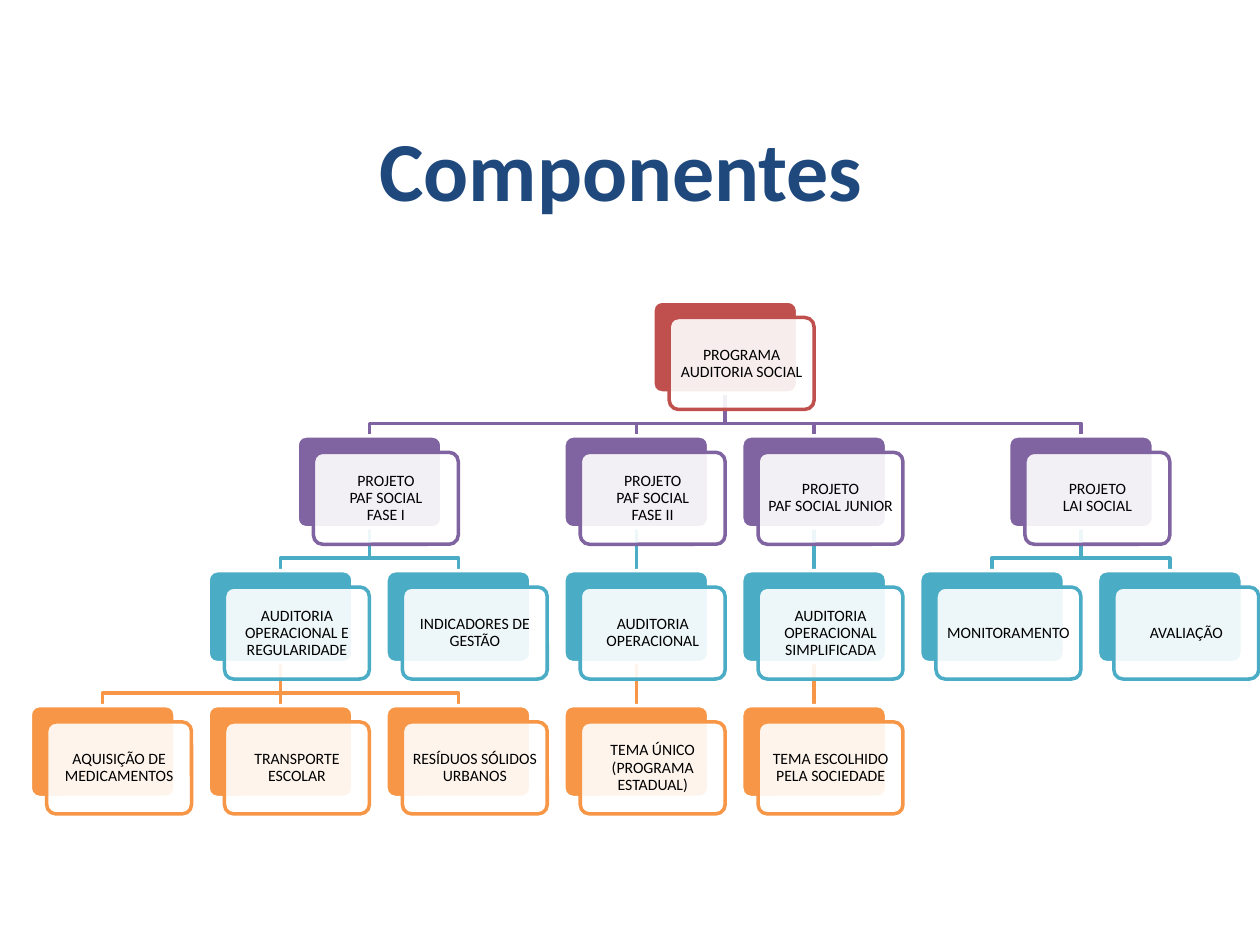
from dataclasses import dataclass
from typing import Iterator

from lxml import etree
from pptx import Presentation
from pptx import util as u
from pptx.dml.color import RGBColor
from pptx.enum import shapes, text
from pptx.oxml import ns

WHITE = RGBColor(0xFF, 0xFF, 0xFF)
BLACK = RGBColor(0x00, 0x00, 0x00)
NAVY = RGBColor(0x1F, 0x49, 0x7D)
RED = RGBColor(0xC0, 0x50, 0x4D)
PURPLE = RGBColor(0x80, 0x64, 0xA2)
TEAL = RGBColor(0x4B, 0xAC, 0xC6)
ORANGE = RGBColor(0xF7, 0x96, 0x46)
LEVEL_COLORS = (RED, PURPLE, TEAL, ORANGE)

SLIDE_W, SLIDE_H = u.Inches(10), u.Inches(7.5)
FIRST_LEFT, LAST_LEFT, LAST_COLUMN = 0.24, 8.71, 6
COLUMN = (LAST_LEFT - FIRST_LEFT) / LAST_COLUMN
FIRST_TOP, ROW = 2.39, 1.07
CARD_W, CARD_H, CARD_SHIFT = 1.15, 0.73, 0.13
ELBOW = 0.97
LINE = u.Pt(2)


@dataclass(frozen=True)
class Node:
    label: str
    children: tuple["Node", ...] = ()
    leaf_column: float = 0

    @property
    def column(self) -> float:
        if not self.children:
            return self.leaf_column
        return (self.children[0].column + self.children[-1].column) / 2

    @property
    def left(self) -> float:
        return FIRST_LEFT + self.column * COLUMN

    @property
    def center(self) -> u.Length:
        return u.Inches(self.left + CARD_W / 2)


def leaf(label: str, column: int) -> Node:
    return Node(label, leaf_column=column)


PROGRAM = Node("PROGRAMA AUDITORIA SOCIAL", (
    Node("PROJETO\nPAF SOCIAL\nFASE I", (
        Node("AUDITORIA OPERACIONAL E REGULARIDADE", (
            leaf("AQUISIÇÃO DE MEDICAMENTOS", 0),
            leaf("TRANSPORTE ESCOLAR", 1),
            leaf("RESÍDUOS SÓLIDOS URBANOS", 2),
        )),
        leaf("INDICADORES DE GESTÃO", 2),
    )),
    Node("PROJETO\nPAF SOCIAL\nFASE II", (
        Node("AUDITORIA OPERACIONAL", (
            leaf("TEMA ÚNICO (PROGRAMA ESTADUAL)", 3),
        )),
    )),
    Node("PROJETO\nPAF SOCIAL JUNIOR", (
        Node("AUDITORIA OPERACIONAL SIMPLIFICADA", (
            leaf("TEMA ESCOLHIDO PELA SOCIEDADE", 4),
        )),
    )),
    Node("PROJETO\nLAI SOCIAL", (
        leaf("MONITORAMENTO", 5),
        leaf("AVALIAÇÃO", 6),
    )),
))


def walk(node: Node, level: int = 0) -> Iterator[tuple[Node, int]]:
    yield node, level
    for child in node.children:
        yield from walk(child, level + 1)


def write(frame, words: str, *, size: float, color: RGBColor, bold: bool = False,
          spacing: float = 1.0, inset: float = 0.1) -> None:
    frame.word_wrap = True
    frame.vertical_anchor = text.MSO_ANCHOR.MIDDLE
    frame.margin_left = frame.margin_right = u.Inches(inset)
    frame.margin_top = frame.margin_bottom = u.Inches(min(inset, 0.06))
    paragraph = frame.paragraphs[0]
    paragraph.text = words
    paragraph.alignment = text.PP_ALIGN.CENTER
    paragraph.line_spacing = spacing
    for run in paragraph.runs:
        run.font.name = "Calibri"
        run.font.size = u.Pt(size)
        run.font.bold = bold
        run.font.color.rgb = color


def set_line(shape, color: RGBColor) -> None:
    shape.line.color.rgb = color
    shape.line.width = LINE


def draw_branch(slide, parent: Node, child: Node, level: int) -> None:
    top = FIRST_TOP + (level - 1) * ROW
    start, elbow, end = (u.Inches(top + drop) for drop in (CARD_H, ELBOW, ROW))
    if parent.column == child.column:
        branch = slide.shapes.add_connector(
            shapes.MSO_CONNECTOR.STRAIGHT, parent.center, start, child.center, end)
        etree.SubElement(branch._element.spPr, ns.qn("a:effectLst"))
    else:
        outline = slide.shapes.build_freeform(parent.center, start)
        outline.add_line_segments(
            [(parent.center, elbow), (child.center, elbow), (child.center, end)],
            close=False)
        branch = outline.convert_to_shape()
        branch.fill.background()
        branch.shadow.inherit = False
    set_line(branch, LEVEL_COLORS[level])


def draw_plate(slide, left: float, top: float, fill: RGBColor, line: RGBColor):
    plate = slide.shapes.add_shape(
        shapes.MSO_SHAPE.ROUNDED_RECTANGLE,
        u.Inches(left), u.Inches(top), u.Inches(CARD_W), u.Inches(CARD_H))
    plate.adjustments[0] = 0.1
    plate.shadow.inherit = False
    plate.fill.solid()
    plate.fill.fore_color.rgb = fill
    set_line(plate, line)
    return plate


def draw_node(slide, node: Node, level: int) -> None:
    top = FIRST_TOP + level * ROW
    color = LEVEL_COLORS[level]
    draw_plate(slide, node.left, top, color, WHITE)
    card = draw_plate(slide, node.left + CARD_SHIFT, top + CARD_SHIFT, WHITE, color)
    tint = card._element.spPr.find(ns.qn("a:solidFill"))[0]
    etree.SubElement(tint, ns.qn("a:alpha"), val="90000")
    write(card.text_frame, node.label, size=9, color=BLACK, spacing=0.9, inset=0.06)


def main() -> None:
    deck = Presentation()
    deck.slide_width, deck.slide_height = SLIDE_W, SLIDE_H
    slide = deck.slides.add_slide(deck.slide_layouts[6])

    nodes = list(walk(PROGRAM))
    for parent, level in reversed(nodes):
        for child in reversed(parent.children):
            draw_branch(slide, parent, child, level + 1)
    for node, level in nodes:
        draw_node(slide, node, level)

    title = slide.shapes.add_textbox(
        u.Inches(0.43), u.Inches(0.84), int(SLIDE_W * 0.9), u.Inches(0.99))
    write(title.text_frame, "Componentes", size=48, color=NAVY, bold=True)
    deck.save("out.pptx")


if __name__ == "__main__":
    main()
